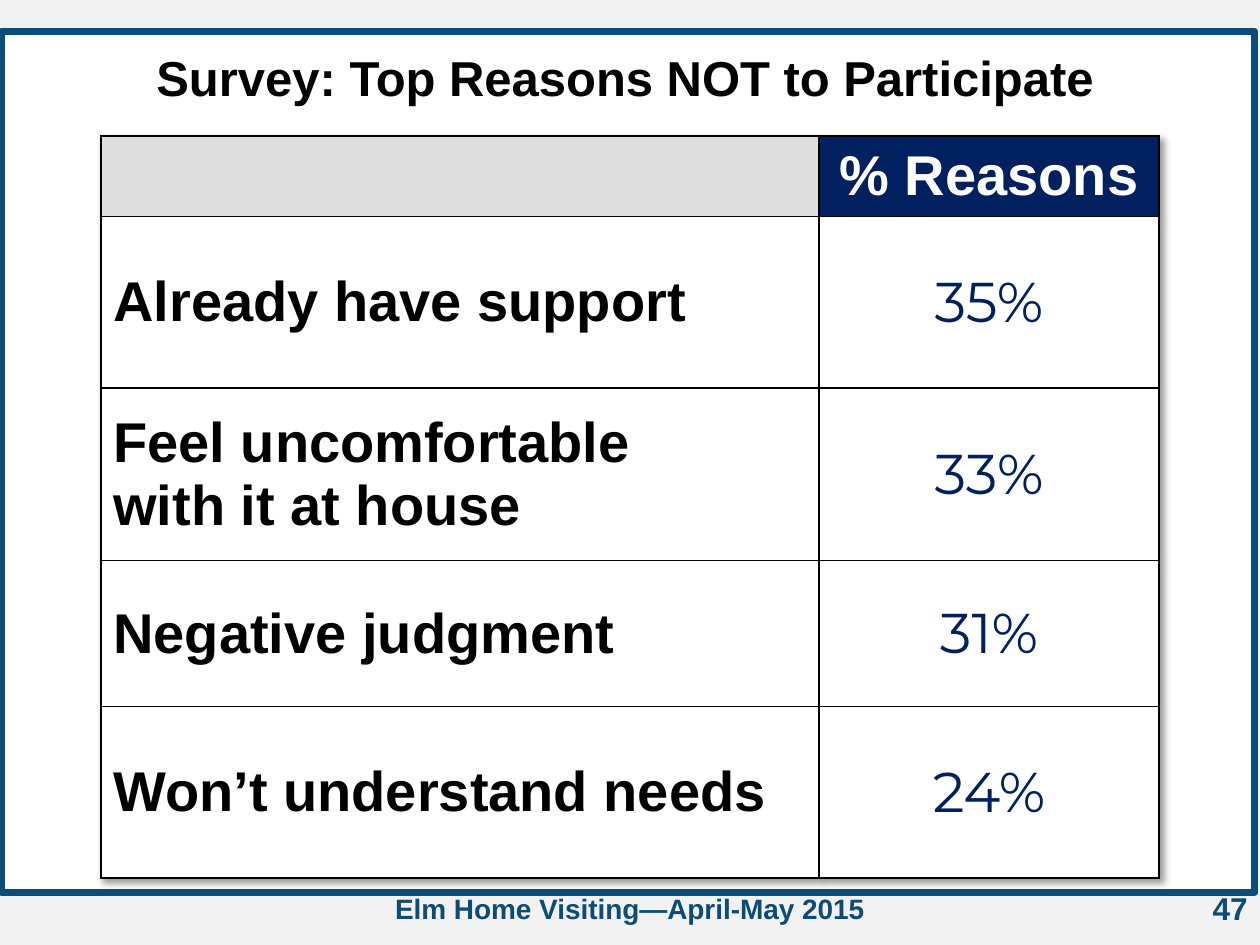
from lxml import etree
from pptx import Presentation
from pptx.dml.color import RGBColor
from pptx.enum import shapes, text
from pptx.oxml import ns, parse_xml
from pptx.util import Inches, Pt

BLACK = RGBColor(0x00, 0x00, 0x00)
WHITE = RGBColor(0xFF, 0xFF, 0xFF)
NAVY = RGBColor(0x00, 0x20, 0x60)
BLUE = RGBColor(0x0C, 0x4C, 0x79)
PALE = RGBColor(0xF2, 0xF2, 0xF2)
GRAY = RGBColor(0xDE, 0xDE, 0xDE)

TITLE = "Survey: Top Reasons NOT to Participate"
FOOTER = "Elm Home Visiting—April-May 2015"
PAGE = "47"
HEADER = "% Reasons"
REASONS = [
    ("Already have support", "35%", 1.36),
    ("Feel uncomfortable\nwith it at house", "33%", 1.37),
    ("Negative judgment", "31%", 1.16),
    ("Won’t understand needs", "24%", 1.36),
]
COLUMNS = [5.7, 2.7]
HEADER_HEIGHT = 0.64

LEFT, CENTER, RIGHT = (text.PP_ALIGN.LEFT, text.PP_ALIGN.CENTER,
                       text.PP_ALIGN.RIGHT)
SHADOW = (
    f'<a:effectLst {ns.nsdecls("a")}>'
    '<a:outerShdw blurRad="50800" dist="38100" dir="2700000" algn="tl">'
    '<a:srgbClr val="000000"><a:alpha val="40000"/></a:srgbClr>'
    '</a:outerShdw></a:effectLst>'
)


def write(tf, content, size=32, color=BLACK, bold=True, font="Arial",
          align=LEFT):
    for i, line in enumerate(content.split("\n")):
        p = tf.add_paragraph() if i else tf.paragraphs[0]
        p.alignment = align
        r = p.add_run()
        r.text = line
        r.font.name = font
        r.font.size = Pt(size)
        r.font.bold = bold
        r.font.color.rgb = color


def add_text(s, box, content, **fmt):
    tf = s.shapes.add_textbox(*map(Inches, box)).text_frame
    tf.word_wrap = True
    write(tf, content, **fmt)


def style_cell(cell, fill):
    cell.fill.solid()
    cell.fill.fore_color.rgb = fill
    cell.vertical_anchor = text.MSO_ANCHOR.MIDDLE
    pr = cell._tc.get_or_add_tcPr()
    for i, side in enumerate(("lnL", "lnR", "lnT", "lnB")):
        ln = etree.Element(ns.qn(f"a:{side}"), w=str(Pt(1)))
        paint = etree.SubElement(ln, ns.qn("a:solidFill"))
        etree.SubElement(paint, ns.qn("a:srgbClr"), val=str(BLACK))
        pr.insert(i, ln)


def add_reasons(s):
    heights = [HEADER_HEIGHT] + [height for _, _, height in REASONS]
    frame = s.shapes.add_table(
        len(heights), len(COLUMNS), Inches(0.8), Inches(1.08),
        Inches(sum(COLUMNS)), Inches(sum(heights)))
    table = frame.table
    table._tbl.tblPr.insert(0, parse_xml(SHADOW))
    for column, width in zip(table.columns, COLUMNS):
        column.width = Inches(width)
    for row, height in zip(table.rows, heights):
        row.height = Inches(height)
    style_cell(table.cell(0, 0), GRAY)
    style_cell(table.cell(0, 1), NAVY)
    write(table.cell(0, 1).text_frame, HEADER, color=WHITE, align=CENTER)
    for i, (reason, share, _) in enumerate(REASONS, 1):
        label, value = table.cell(i, 0), table.cell(i, 1)
        style_cell(label, WHITE)
        style_cell(value, WHITE)
        write(label.text_frame, reason)
        write(value.text_frame, share, color=NAVY, bold=False,
              font="Montserrat", align=CENTER)


def main():
    prs = Presentation()
    prs.slide_width, prs.slide_height = Inches(10), Inches(7.5)
    s = prs.slides.add_slide(prs.slide_layouts[6])
    s.background.fill.solid()
    s.background.fill.fore_color.rgb = PALE

    panel = s.shapes.add_shape(
        shapes.MSO_SHAPE.ROUNDED_RECTANGLE,
        *map(Inches, (0.01, 0.25, 9.95, 6.83)))
    panel.adjustments[0] = 0
    panel.shadow.inherit = False
    panel.fill.solid()
    panel.fill.fore_color.rgb = WHITE
    panel.line.color.rgb = BLUE
    panel.line.width = Pt(4)

    add_text(s, (7.67, 7.01, 2.33, 0.52), PAGE, size=18, color=BLUE,
             align=RIGHT)
    add_text(s, (2.53, 7.03, 4.94, 0.37), FOOTER, size=16, color=BLUE,
             align=CENTER)
    add_reasons(s)
    add_text(s, (0, 0.33, 9.92, 0.57), TITLE, size=28, align=CENTER)
    prs.save("out.pptx")


if __name__ == "__main__":
    main()
